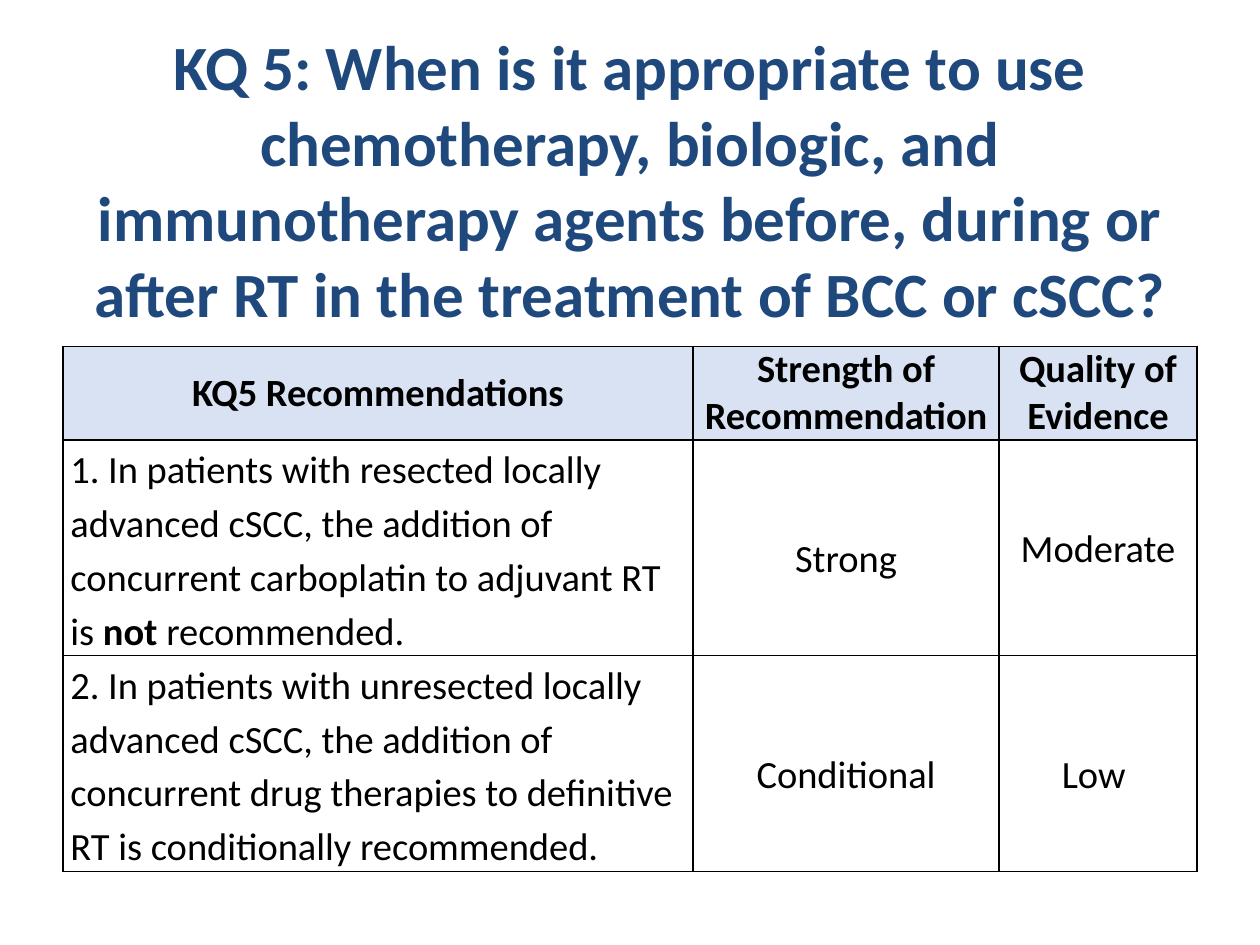
from lxml import etree
from pptx import Presentation
from pptx.dml.color import RGBColor
from pptx.enum import text
from pptx.oxml import ns
from pptx.util import Cm, Pt

COLORS = {"title": "1F497D", "ink": "000000", "header": "D9E2F3"}
FONT = "Calibri"
COLUMNS = [12.7, 6.17, 3.99]
ROWS = [1.89, 4.35, 4.35]
HEADER = ["KQ5 Recommendations", "Strength of Recommendation", "Quality of Evidence"]
BODY = [
    [["1. In patients with resected locally advanced cSCC, the addition of "
      "concurrent carboplatin to adjuvant RT is ", "not", " recommended."],
     ["Strong"], ["Moderate"]],
    [["2. In patients with unresected locally advanced cSCC, the addition of "
      "concurrent drug therapies to definitive RT is conditionally recommended."],
     ["Conditional"], ["Low "]],
]
SPACING = [[1.15, 1.5, 1.06], [1.15, 1.5, 1.5]]
LEFT, CENTER = text.PP_ALIGN.LEFT, text.PP_ALIGN.CENTER
TOP, MIDDLE = text.MSO_ANCHOR.TOP, text.MSO_ANCHOR.MIDDLE


def apply(target, values):
    for name, value in values.items():
        setattr(target, name, value)


def add_span(para, words, size, color, bold):
    span = para.add_run()
    span.text = words
    apply(span.font, {"name": FONT, "size": Pt(size), "bold": bold})
    span.font.color.rgb = RGBColor.from_string(COLORS[color])


def add_borders(cell):
    properties = cell._tc.get_or_add_tcPr()
    for side in ("lnL", "lnR", "lnT", "lnB"):
        line = etree.SubElement(properties, ns.qn("a:" + side), w=str(Pt(1)))
        fill = etree.SubElement(line, ns.qn("a:solidFill"))
        etree.SubElement(fill, ns.qn("a:srgbClr"), val=COLORS["ink"])


def fill_cell(cell, spans, align, anchor, spacing, header):
    apply(cell, {"margin_left": Cm(0.15), "margin_right": Cm(0.15),
                 "margin_top": 0, "margin_bottom": 0, "vertical_anchor": anchor})
    add_borders(cell)
    if header:
        cell.fill.solid()
        cell.fill.fore_color.rgb = RGBColor.from_string(COLORS["header"])
    else:
        cell.fill.background()
    para = cell.text_frame.paragraphs[0]
    apply(para, {"alignment": align, "line_spacing": spacing})
    for words in spans:
        add_span(para, words, 22, "ink", header or words == "not")


def place_title(page, left, top, width, height):
    box = page.shapes.title
    apply(box, {"left": Cm(left), "top": Cm(top),
                "width": Cm(width), "height": Cm(height)})
    apply(box.text_frame, {"word_wrap": True, "vertical_anchor": TOP,
                           "auto_size": text.MSO_AUTO_SIZE.NONE})
    para = box.text_frame.paragraphs[0]
    para.alignment = CENTER
    add_span(para, "KQ 5: When is it appropriate to use chemotherapy, biologic, and "
             "immunotherapy agents before, during or after RT in the treatment of "
             "BCC or cSCC?", 36, "title", True)


def place_recommendations(page, left, top):
    table = page.shapes.add_table(
        len(ROWS), len(COLUMNS), Cm(left), Cm(top), Cm(sum(COLUMNS)), Cm(sum(ROWS))
    ).table
    apply(table, {"first_row": False, "horz_banding": False})
    for column, width in zip(table.columns, COLUMNS):
        column.width = Cm(width)
    for row, height in zip(table.rows, ROWS):
        row.height = Cm(height)
    for index, words in enumerate(HEADER):
        fill_cell(table.cell(0, index), [words], CENTER, MIDDLE, 1.0, True)
    for number, (entries, spacings) in enumerate(zip(BODY, SPACING), 1):
        for index, (spans, spacing) in enumerate(zip(entries, spacings)):
            align, anchor = (CENTER, MIDDLE) if index else (LEFT, TOP)
            fill_cell(table.cell(number, index), spans, align, anchor, spacing, False)


def main():
    deck = Presentation()
    apply(deck, {"slide_width": Cm(25.4), "slide_height": Cm(19.05)})
    page = deck.slides.add_slide(deck.slide_layouts[5])
    place_title(page, 1.27, 0.43, 22.86, 2.77)
    place_recommendations(page, 1.27, 6.98)
    deck.save("out.pptx")


if __name__ == "__main__":
    main()
